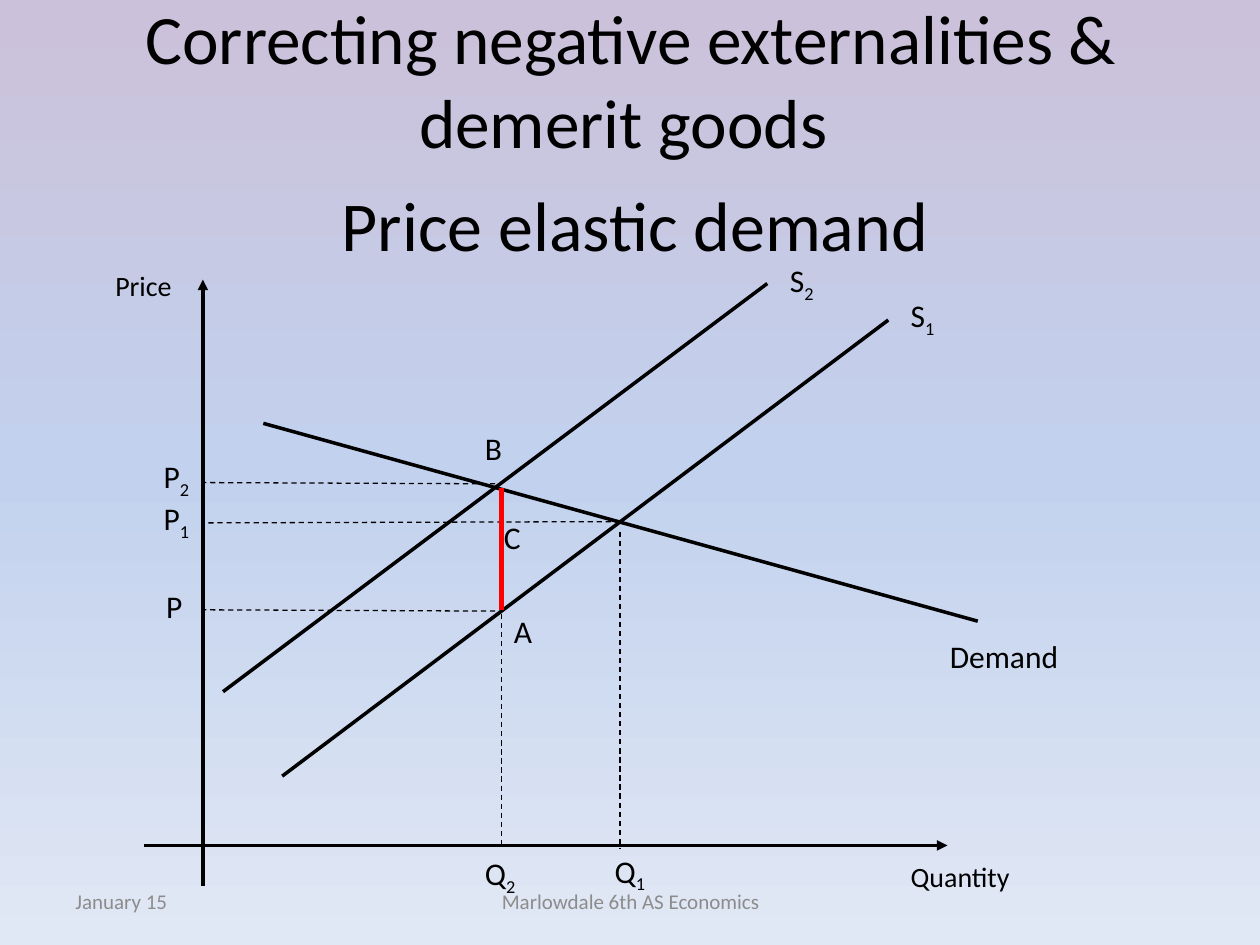
from copy import deepcopy
from pptx import Presentation
from pptx.dml.color import RGBColor as RGB
from pptx.enum.dml import MSO_LINE as Dash
from pptx.enum.shapes import MSO_CONNECTOR as Conn
from pptx.enum.text import MSO_ANCHOR as Anchor, MSO_AUTO_SIZE as Auto, PP_ALIGN as Align
from pptx.oxml.ns import qn
from pptx.util import Inches, Pt
from lxml.etree import SubElement

# Theme
THEME = dict(
    font="Calibri", ink="000000", grey="8C8C8C", red="FF0000",
    title=39.6, head=40, label=18, axis=16, foot=12,
    thick=3, main=2, thin=0.75,
    back=[(0, "CCC1DA"), (0.5, "C2D1ED"), (1, "E1E8F5")],
)

# Content
TITLE = "Correcting negative externalities & demerit goods "
HEAD = "Price elastic demand"
DATE, FOOT = "January 15", "Marlowdale 6th AS Economics"

# Key places on the graph
LEFT, BASE = 1.61, 6.71           # axes
Q1, Q2 = 4.92, 3.98               # quantities
P1, P2, P = 4.15, 3.84, 4.84      # prices

AXES = [((LEFT, 7.03), (LEFT, 2.22)), ((1.14, BASE), (7.52, BASE))]
CURVES = [
    ((7.05, 2.54), (2.24, 6.16)),  # S1
    ((6.09, 2.25), (1.77, 5.49)),  # S2
    ((2.09, 3.36), (7.76, 4.93)),  # demand
]
GUIDES = [
    ((Q1, 4.22), (Q1, 6.74)), ((Q1, 4.14), (LEFT, P1)),
    ((Q2, 3.87), (Q2, 6.73)), ((3.93, P2), (LEFT, 3.83)),
    ((3.93, 4.85), (LEFT, P)),
]
TAX = ((Q2, 3.87), (Q2, P))

# Labels: text, subscript, left, top, width
LABELS = [
    ("S", "1", 7.13, 2.3, 0.4), ("S", "2", 6.17, 2.02, 0.4),
    ("Demand", "", 7.44, 5.01, 1.07),
    ("Q", "1", 4.78, 6.71, 0.46), ("Q", "2", 3.75, 6.73, 0.46),
    ("P", "1", 1.2, 3.91, 0.42), ("P", "2", 1.2, 3.58, 0.42),
    ("P", "", 1.22, 4.61, 0.33), ("B", "", 3.75, 3.36, 0.34),
    ("A", "", 3.98, 4.81, 0.35), ("C", "", 3.9, 4.06, 0.34),
]


def write(frame, text, size="label", color="ink", align=Align.LEFT,
          anchor=Anchor.TOP, wrap=True, grow=False, sub=""):
    frame.word_wrap = wrap
    frame.auto_size = Auto.SHAPE_TO_FIT_TEXT if grow else Auto.NONE
    frame.vertical_anchor = anchor
    para = frame.paragraphs[0]
    para.alignment = align
    for part in filter(None, (text, sub)):
        run = para.add_run()
        run.text = part
        run.font.name = THEME["font"]
        run.font.size = Pt(THEME[size])
        run.font.color.rgb = RGB.from_string(THEME[color])
    if sub:
        run.font._element.set("baseline", "-25000")


def place(slide, text, box, **style):
    write(slide.shapes.add_textbox(*map(Inches, box)).text_frame, text, **style)


def draw(slide, ends, width="main", color="ink", dash=False, arrow=False):
    start, end = ends
    line = slide.shapes.add_connector(Conn.STRAIGHT, *map(Inches, start + end))
    line.line.width = Pt(THEME[width])
    line.line.color.rgb = RGB.from_string(THEME[color])
    if dash:
        line.line.dash_style = Dash.DASH
    props = line.element.find(qn("p:spPr"))
    if arrow:
        SubElement(props.find(qn("a:ln")), qn("a:tailEnd"), type="triangle")
    SubElement(props, qn("a:effectLst"))


def paint(slide):
    fill = slide.background.fill
    fill.gradient()
    fill.gradient_angle = 270
    stops = slide.element.find(".//" + qn("a:gsLst"))
    stops.append(deepcopy(stops[-1]))
    for stop, (pos, color) in zip(fill.gradient_stops, THEME["back"]):
        stop.position = pos
        stop.color.rgb = RGB.from_string(color)


def main():
    deck = Presentation()
    deck.slide_width, deck.slide_height = Inches(10), Inches(7.5)
    slide = deck.slides.add_slide(deck.slide_layouts[5])
    paint(slide)

    # Title and heading
    title = slide.shapes.title
    title.left, title.top, title.width, title.height = map(Inches, (0.51, 0, 9, 1.25))
    write(title.text_frame, TITLE, size="title", align=Align.CENTER, anchor=Anchor.MIDDLE)
    place(slide, HEAD, (0.51, 1.39, 9.06, 5.51), size="head", align=Align.CENTER)

    # Footer
    foot = dict(size="foot", color="grey", anchor=Anchor.MIDDLE)
    place(slide, DATE, (0.5, 6.95, 2.33, 0.4), **foot)
    place(slide, FOOT, (3.42, 6.95, 3.17, 0.4), align=Align.CENTER, **foot)

    # Graph lines
    for ends in AXES:
        draw(slide, ends, arrow=True)
    for ends in CURVES:
        draw(slide, ends)
    for ends in GUIDES:
        draw(slide, ends, width="thin", dash=True)
    draw(slide, TAX, width="thick", color="red")

    # Graph labels
    place(slide, "Price", (0.28, 2.08, 1.18, 0.37), size="axis", align=Align.RIGHT, grow=True)
    place(slide, "Quantity", (7.13, 6.77, 1.5, 0.37), size="axis", grow=True)
    for text, sub, left, top, width in LABELS:
        place(slide, text, (left, top, width, 0.4), sub=sub, wrap=False, grow=True)

    deck.save("out.pptx")


if __name__ == "__main__":
    main()
